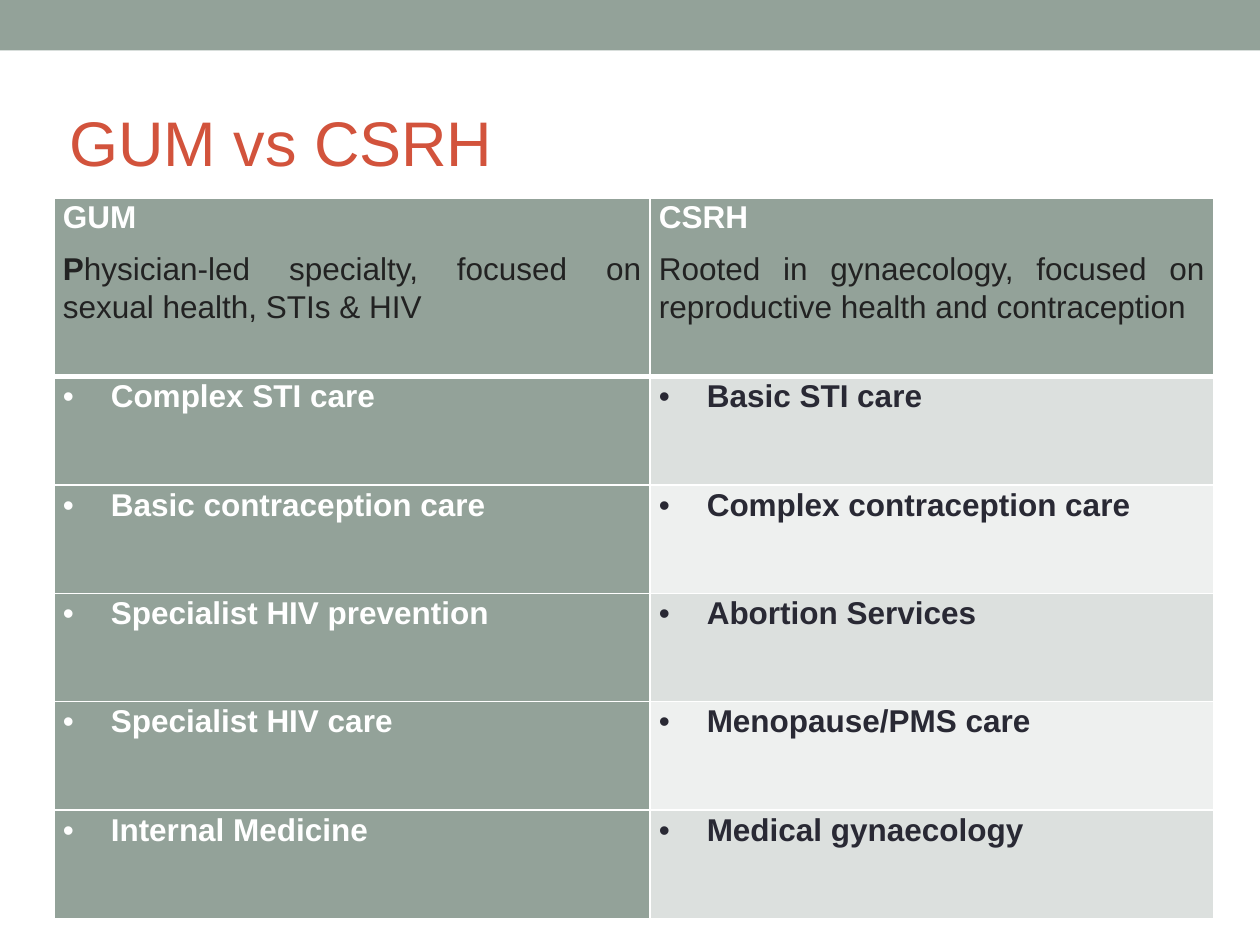
from lxml import etree
from pptx import Presentation
from pptx.dml.color import RGBColor
from pptx.enum import shapes, text
from pptx.oxml.ns import qn
from pptx.util import Inches, Pt

COLORS = {
    "sage": "93A299", "title": "D2533C", "white": "FFFFFF", "intro": "222222",
    "ink": "292934", "band_dark": "DCE0DE", "band_light": "EEF0EF",
}
TITLE = "GUM vs CSRH"
# Each heading: specialty, then the description as (words, bold) spans
HEADINGS = [
    ("GUM", [("P", True),
             ("hysician-led specialty, focused on sexual health, STIs & HIV ", False)]),
    ("CSRH", [("Rooted in gynaecology, focused on reproductive health and contraception",
               False)]),
]
SERVICES = [
    ("Complex STI care", "Basic STI care"),
    ("Basic contraception care", "Complex contraception care"),
    ("Specialist HIV prevention", "Abortion Services"),
    ("Specialist HIV care", "Menopause/PMS care"),
    ("Internal Medicine", "Medical gynaecology"),
]
COLUMN_WIDTHS = (4.73, 4.47)
HEADER_HEIGHT, ROW_HEIGHT = 1.42, 0.86


def rgb(name):
    return RGBColor.from_string(COLORS[name])


def write(para, words, color, size=18, bold=False):
    span = para.add_run()
    span.text = words
    span.font.name = "Arial"
    span.font.size = Pt(size)
    span.font.bold = bold
    span.font.color.rgb = rgb(color)


def justify(para, after=8):
    para.alignment = text.PP_ALIGN.JUSTIFY
    para.line_spacing = 1.07
    para.space_after = Pt(after)


def add_bullet(para):
    props = para._p.get_or_add_pPr()
    indent = Inches(0.38)
    props.set("marL", str(indent))
    props.set("indent", str(-indent))
    etree.SubElement(props, qn("a:buFont")).set("typeface", "Arial")
    etree.SubElement(props, qn("a:buChar")).set("char", "•")


def style_cell(cell, fill, top=1, bottom=1):
    """Set margins, fill and white borders; top and bottom are line widths."""
    cell.margin_left = cell.margin_right = Inches(0.07)
    cell.margin_top = cell.margin_bottom = 0
    cell.fill.solid()
    cell.fill.fore_color.rgb = rgb(fill)
    props = cell._tc.get_or_add_tcPr()
    borders = (("lnL", 1), ("lnR", 1), ("lnT", top), ("lnB", bottom))
    for place, (side, width) in enumerate(borders):
        line = etree.Element(qn(f"a:{side}"), w=str(Pt(width)))
        paint = etree.SubElement(line, qn("a:solidFill"))
        etree.SubElement(paint, qn("a:srgbClr")).set("val", COLORS["white"])
        props.insert(place, line)


def add_title(page):
    box = page.shapes.add_textbox(Inches(0.5), Inches(0.58), Inches(9), Inches(1.08))
    frame = box.text_frame
    frame.word_wrap = True
    frame.vertical_anchor = text.MSO_ANCHOR.MIDDLE
    frame.margin_left = frame.margin_right = Inches(0.05)
    write(frame.paragraphs[0], TITLE, "title", size=36)


def add_comparison(page):
    height = HEADER_HEIGHT + ROW_HEIGHT * len(SERVICES)
    table = page.shapes.add_table(
        len(SERVICES) + 1, len(HEADINGS), Inches(0.43), Inches(1.57),
        Inches(sum(COLUMN_WIDTHS)), Inches(height)).table
    for column, width in zip(table.columns, COLUMN_WIDTHS):
        column.width = Inches(width)
    for index, row in enumerate(table.rows):
        row.height = Inches(ROW_HEIGHT if index else HEADER_HEIGHT)

    for col, (name, description) in enumerate(HEADINGS):
        cell = table.cell(0, col)
        style_cell(cell, "sage", bottom=3)
        heading = cell.text_frame.paragraphs[0]
        justify(heading)
        write(heading, name, "white", bold=True)
        intro = cell.text_frame.add_paragraph()
        justify(intro)
        for words, bold in description:
            write(intro, words, "intro", bold=bold)

    for row, services in enumerate(SERVICES, start=1):
        band = "band_dark" if row % 2 else "band_light"
        looks = (("sage", "white", 0), (band, "ink", 8))
        for col, (service, (fill, color, after)) in enumerate(zip(services, looks)):
            cell = table.cell(row, col)
            style_cell(cell, fill, top=3 if row == 1 else 1)
            para = cell.text_frame.paragraphs[0]
            justify(para, after)
            add_bullet(para)
            write(para, service, color, bold=True)


def main():
    deck = Presentation()
    deck.slide_width, deck.slide_height = Inches(10), Inches(7.5)
    page = deck.slides.add_slide(deck.slide_layouts[6])
    banner = page.shapes.add_shape(
        shapes.MSO_SHAPE.RECTANGLE, 0, 0, deck.slide_width, Inches(0.4))
    banner.shadow.inherit = False
    banner.fill.solid()
    banner.fill.fore_color.rgb = rgb("sage")
    banner.line.fill.background()
    add_title(page)
    add_comparison(page)
    deck.save("out.pptx")


if __name__ == "__main__":
    main()
